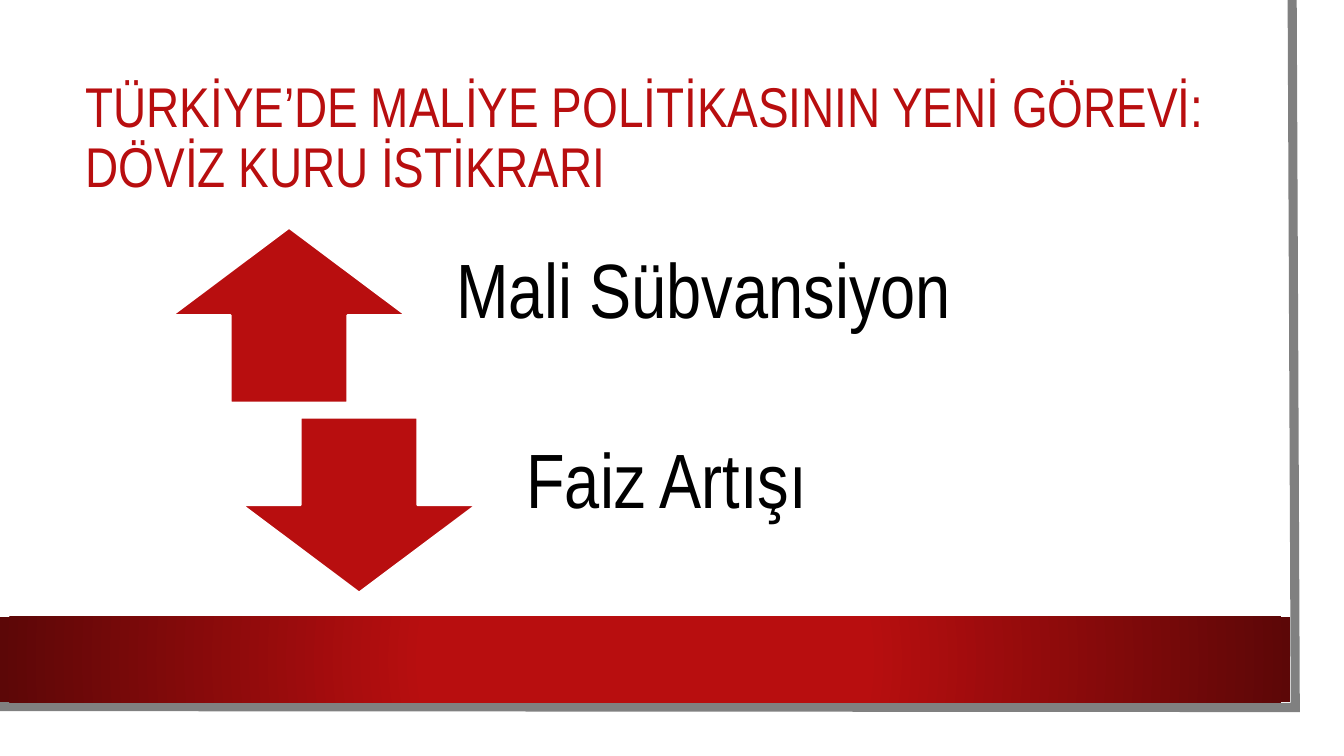
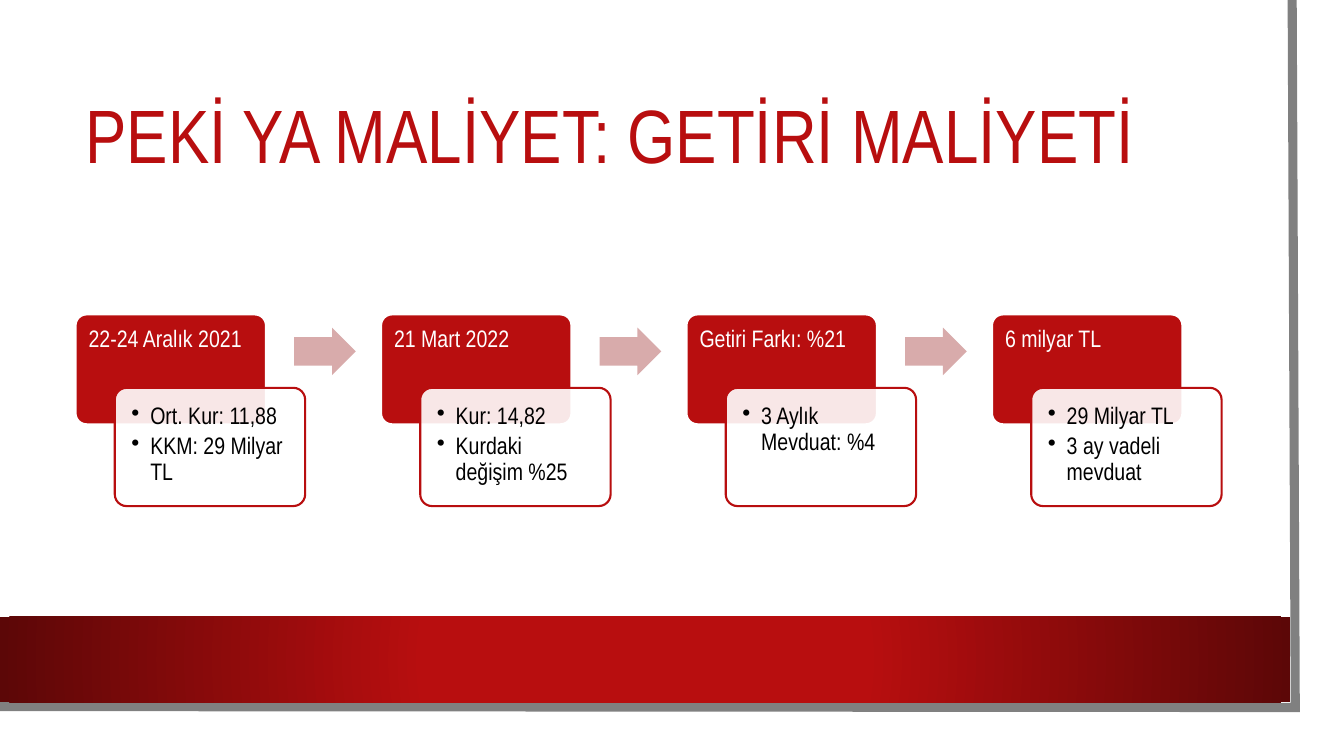
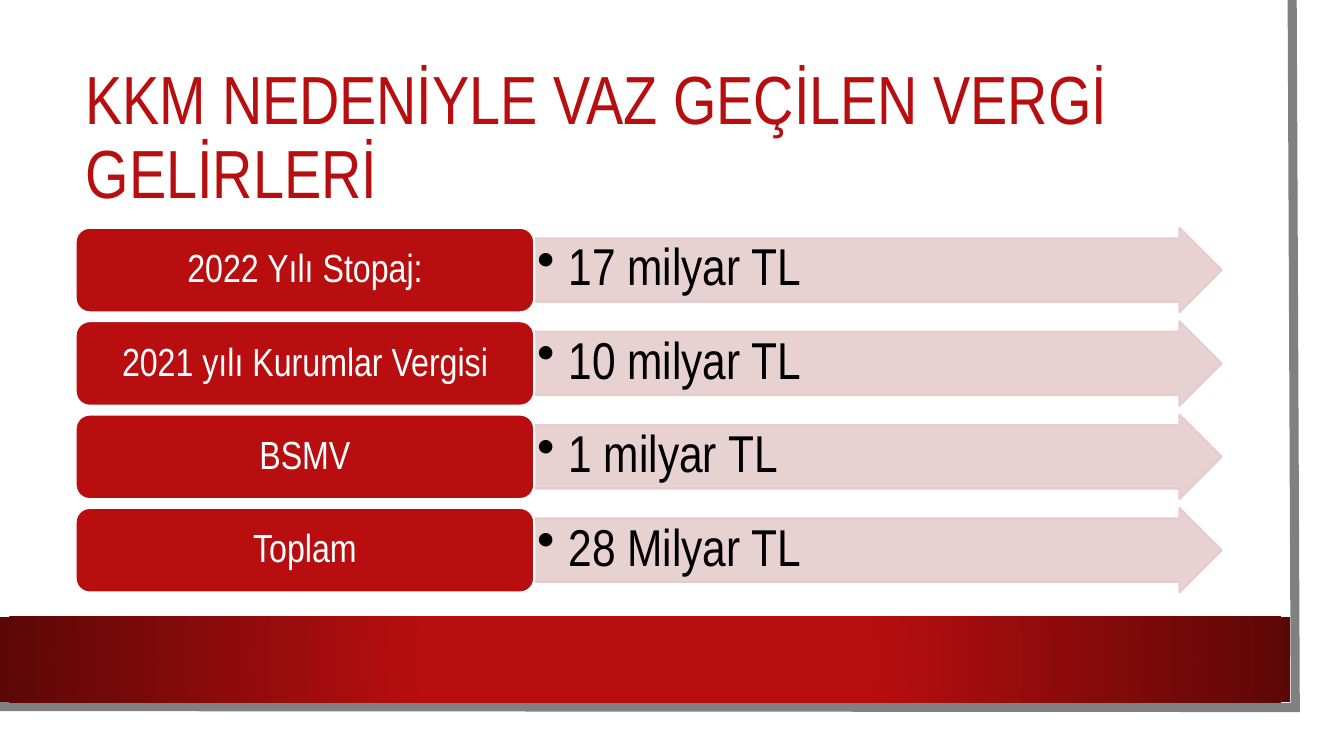
from pptx import Presentation
from pptx.dml.color import RGBColor
from pptx.enum import shapes, text
from pptx.oxml import parse_xml
from pptx.oxml import ns
from pptx.util import Pt
from lxml import etree

RED = RGBColor(0xB8, 0x0E, 0x0F)
DARK = RGBColor(0x5C, 0x07, 0x07)
ROSE = RGBColor(0xD8, 0xAB, 0xAB)
PALE = RGBColor(0xE6, 0xCC, 0xCC)
GREY = RGBColor(0x80, 0x80, 0x80)
WHITE = RGBColor(0xFF, 0xFF, 0xFF)
BLACK = RGBColor(0, 0, 0)
FONT = "Arial Narrow"
KIND = shapes.MSO_SHAPE
MID, TOP = text.MSO_ANCHOR.MIDDLE, text.MSO_ANCHOR.TOP
LEFT, MIDST = text.PP_ALIGN.LEFT, text.PP_ALIGN.CENTER


class Deck:
    """Holds the style and the current slide, and draws each kind of element."""

    def __init__(self):
        self.prs = Presentation()
        self.prs.slide_width, self.prs.slide_height = Pt(960), Pt(540)
        self.base = self.prs.slide_layouts[5]
        self.slide = None

    def page(self, title, size):
        first = self.slide is None
        self.slide = self.prs.slides.add_slide(self.base)
        if first:
            self.frame()
        box = self.slide.shapes.title
        box.left, box.top, box.width, box.height = Pt(54), Pt(54), Pt(819), Pt(91)
        self.words(box, [title], size, RED, MID, LEFT, (7.2, 3.6, 7.2, 3.6))

    def frame(self):
        pen = self.slide.shapes.build_freeform(Pt(923), 0, scale=1.0)
        pen.add_line_segments([(Pt(925.2), Pt(505.4)), (Pt(-2.2), Pt(504.7))], close=False)
        edge = pen.convert_to_shape()
        edge.shadow.inherit = False
        edge.fill.background()
        edge.line.color.rgb, edge.line.width = GREY, Pt(6.5)
        etree.SubElement(edge.element.spPr.find(ns.qn("a:ln")), ns.qn("a:miter"), lim="800000")

        band = self.shape(KIND.RECTANGLE, (0, 440.6, 921.6, 61.2), RED)
        stops = "".join(f'<a:gs pos="{at}"><a:srgbClr val="{hue}"/></a:gs>'
                        for at, hue in ((34000, RED), (100000, DARK)))
        blend = parse_xml(
            f'<a:gradFill {ns.nsdecls("a")}><a:gsLst>{stops}</a:gsLst><a:path path="circle">'
            '<a:fillToRect l="50000" t="50000" r="50000" b="50000"/></a:path></a:gradFill>')
        solid = band.element.spPr.find(ns.qn("a:solidFill"))
        solid.getparent().replace(solid, blend)

        tree = self.base.shapes.element
        for spot, item in enumerate((edge, band), 2):
            tree.insert(spot, item.element)

    def shape(self, kind, at, fill, line=None, adj=(), alpha=None):
        item = self.slide.shapes.add_shape(kind, *map(Pt, at))
        item.shadow.inherit = False
        for i, part in enumerate(adj):
            item.adjustments[i] = part
        item.fill.solid()
        item.fill.fore_color.rgb = fill
        if alpha:
            hue = item.element.spPr.find(".//" + ns.qn("a:srgbClr"))
            etree.SubElement(hue, ns.qn("a:alpha"), val=str(alpha * 1000))
        if line is None:
            item.line.fill.background()
        else:
            item.line.color.rgb, item.line.width = line, Pt(1.5)
        return item

    def label(self, at, line, size):
        box = self.slide.shapes.add_textbox(*map(Pt, at))
        self.words(box, [line], size, BLACK, MID, LEFT, (31, 0, 31, 31))

    def words(self, box, lines, size, hue, anchor, align, pad, hang=0):
        frame = box.text_frame
        frame.word_wrap = True
        frame.auto_size = text.MSO_AUTO_SIZE.NONE
        frame.vertical_anchor = anchor
        (frame.margin_left, frame.margin_top,
         frame.margin_right, frame.margin_bottom) = map(Pt, pad)
        for i, line in enumerate(lines):
            para = frame.add_paragraph() if i else frame.paragraphs[0]
            if hang:
                props = para._p.get_or_add_pPr()
                props.set("marL", str(Pt(hang)))
                props.set("indent", str(-Pt(hang)))
                etree.SubElement(props, ns.qn("a:buChar"), char="•")
            para.alignment = align
            para.line_spacing = 0.9
            para.space_before, para.space_after = Pt(0), Pt(3 if hang else 0)
            run = para.add_run()
            run.text = line
            run.font.name, run.font.size = FONT, Pt(size)
            run.font.color.rgb = hue


def main():
    deck = Deck()

    deck.page("TÜRKİYE’DE MALİYE POLİTİKASININ YENİ GÖREVİ: DÖVİZ KURU İSTİKRARI", 40)
    forces = ((KIND.UP_ARROW, "Mali Sübvansiyon"), (KIND.DOWN_ARROW, "Faiz Artışı"))
    for i, (kind, name) in enumerate(forces):
        x, y = 123 + 50 * i, 162.7 + 135.6 * i
        deck.shape(kind, (x, y, 167, 125), RED, WHITE)
        deck.label((x + 172, y, 459, 125), name, 55)

    deck.page("PEKİ YA MALİYET: GETİRİ MALİYETİ", 54)
    steps = (
        ("22-24 Aralık 2021", ("Ort. Kur: 11,88", "KKM: 29 Milyar TL")),
        ("21 Mart 2022", ("Kur: 14,82", "Kurdaki değişim %25")),
        ("Getiri Farkı: %21", ("3 Aylık Mevduat: %4",)),
        ("6 milyar TL", ("29 Milyar TL", "3 ay vadeli mevduat")),
    )
    for i, (head, notes) in enumerate(steps):
        x = 54 + 218.2 * i
        card = deck.shape(KIND.ROUNDED_RECTANGLE, (x, 224.6, 136, 78.5), RED, WHITE, (0.1,))
        deck.words(card, [head], 17, WHITE, TOP, LEFT, (7, 7, 7, 5))
        card = deck.shape(KIND.ROUNDED_RECTANGLE, (x + 28, 277, 136, 84.5),
                          WHITE, RED, (0.1,), 90)
        deck.words(card, notes, 17, BLACK, TOP, LEFT, (9.4,) * 4, 13.5)
        if i < len(steps) - 1:
            deck.shape(KIND.RIGHT_ARROW, (x + 156.2, 234, 44, 34), ROSE, adj=(0.6, 0.5))

    deck.page("KKM NEDENİYLE VAZ GEÇİLEN VERGİ GELİRLERİ", 48.6)
    taxes = (
        ("2022 Yılı Stopaj:", "17 milyar TL"),
        ("2021 yılı Kurumlar Vergisi", "10 milyar TL"),
        ("BSMV", "1 milyar TL"),
        ("Toplam", "28 Milyar TL"),
    )
    for i, (name, cost) in enumerate(taxes):
        y = 162.7 + 66.7 * i
        arrow = deck.shape(KIND.RIGHT_ARROW, (381.6, y, 491, 60.4), PALE, PALE, (0.75, 0.5), 90)
        deck.words(arrow, [cost], 37, BLACK, TOP, LEFT, (2,) * 4, 22.5)
        tag = deck.shape(KIND.ROUNDED_RECTANGLE, (54, y, 327.6, 60.4), RED, WHITE)
        deck.words(tag, [name], 28, WHITE, MID, MIDST, (8.4, 4.2, 8.4, 4.2))

    deck.prs.save("out.pptx")


if __name__ == "__main__":
    main()
